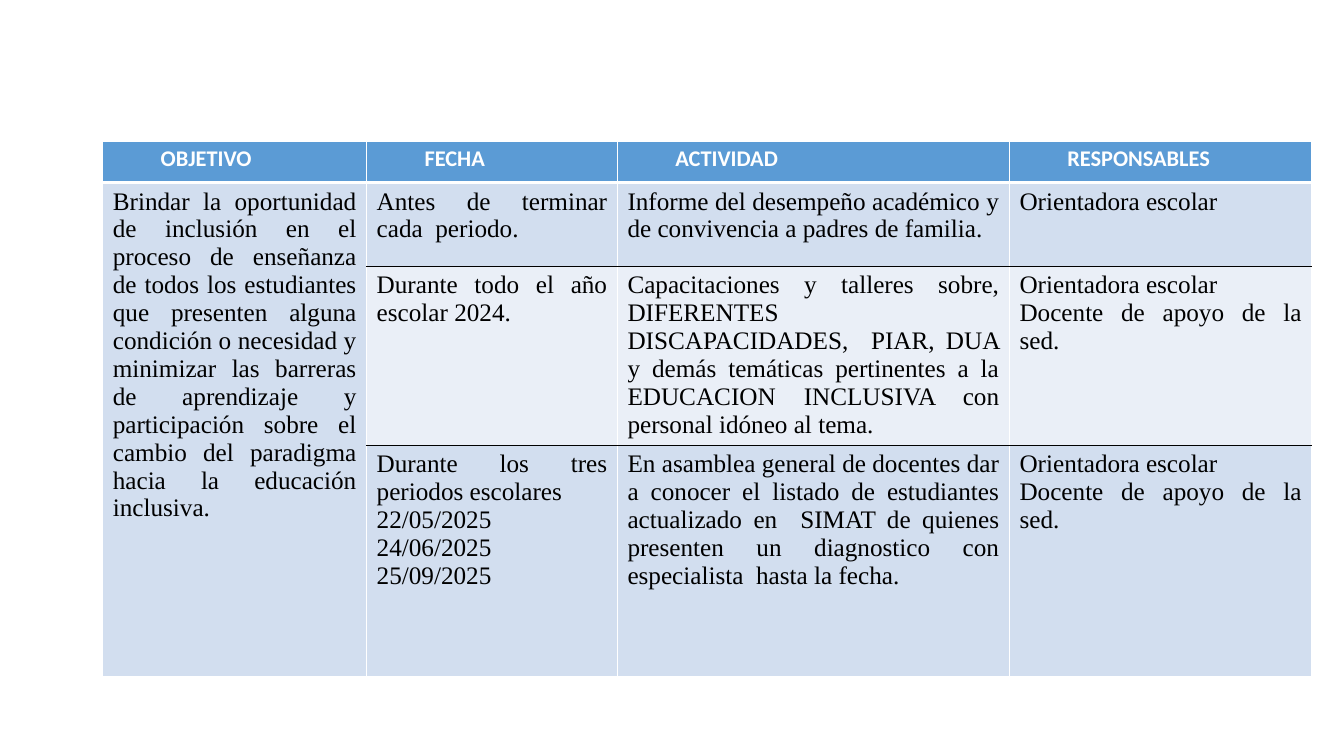
from lxml import etree
from pptx import Presentation
from pptx.dml.color import RGBColor
from pptx.enum.text import PP_ALIGN
from pptx.oxml.ns import qn
from pptx.util import Cm, Pt

JUSTIFY, LEFT = PP_ALIGN.JUSTIFY, PP_ALIGN.LEFT
BLANK_LAYOUT = 6
WHITE, BLACK, BLUE = "FFFFFF", "000000", "5B9BD5"
BANDS = ["D2DEEF", "EAEFF7"]

COLUMN_WIDTHS = [6.65, 6.32, 9.88, 7.62]
ROW_HEIGHTS = [1.04, 2.11, 4.5, 5.84]

HEADINGS = ["OBJETIVO", "FECHA", "ACTIVIDAD", "RESPONSABLES"]
OBJECTIVE = (
    "Brindar la oportunidad de inclusión en el proceso de enseñanza de todos los "
    "estudiantes que presenten alguna condición o necesidad y minimizar las barreras "
    "de aprendizaje y participación sobre el cambio del paradigma hacia la educación "
    "inclusiva."
)
COUNSELLOR = "Orientadora escolar"
TEAM = [COUNSELLOR, "Docente de apoyo de la sed."]
# Each activity: date, activity and people in charge, as lists of paragraphs
ACTIVITIES = [
    (
        ["Antes de terminar cada  periodo."],
        ["Informe del desempeño académico y de convivencia a padres de familia."],
        [COUNSELLOR],
    ),
    (
        ["Durante todo el año escolar 2024."],
        ["Capacitaciones y talleres sobre, DIFERENTES DISCAPACIDADES,  PIAR, DUA y "
         "demás temáticas pertinentes a la EDUCACION INCLUSIVA con personal idóneo "
         "al tema."],
        TEAM,
    ),
    (
        ["Durante los tres periodos escolares", "22/05/2025  24/06/2025", "25/09/2025"],
        ["En asamblea general de docentes dar a conocer el listado de estudiantes "
         "actualizado en  SIMAT de quienes presenten un diagnostico con especialista  "
         "hasta la fecha."],
        TEAM,
    ),
]


def rgb(value):
    return RGBColor.from_string(value)


class PlanSlide:
    """Holds the slide and the styles of its heading and body cells."""

    heading_font, heading_size = "Calibri", Pt(16)
    body_font, body_size = "Times New Roman", Pt(18)

    def __init__(self, deck):
        self.slide = deck.slides.add_slide(deck.slide_layouts[BLANK_LAYOUT])

    def table(self, left, top, widths, heights):
        frame = self.slide.shapes.add_table(
            len(heights), len(widths), Cm(left), Cm(top), Cm(sum(widths)), Cm(sum(heights))
        )
        for column, width in zip(frame.table.columns, widths):
            column.width = Cm(width)
        for row, height in zip(frame.table.rows, heights):
            row.height = Cm(height)
        return frame.table

    def surface(self, cell, fill, top=(WHITE, 1), bottom=(WHITE, 1)):
        """Set borders, as (colour, points), and then the fill of a cell."""
        properties = cell._tc.get_or_add_tcPr()
        sides = {"L": (WHITE, 1), "R": (WHITE, 1), "T": top, "B": bottom}
        for side, (color, points) in sides.items():
            line = etree.SubElement(properties, qn(f"a:ln{side}"), w=str(Pt(points)))
            solid = etree.SubElement(line, qn("a:solidFill"))
            etree.SubElement(solid, qn("a:srgbClr"), val=color)
        cell.fill.solid()
        cell.fill.fore_color.rgb = rgb(fill)

    def run(self, paragraph, text, font, size, color, bold):
        run = paragraph.add_run()
        run.text = text
        run.font.name, run.font.size, run.font.bold = font, size, bold
        run.font.color.rgb = rgb(color)

    def heading(self, cell, text):
        cell.margin_left = cell.margin_right = Cm(0.19)
        cell.margin_top = cell.margin_bottom = 0
        paragraph = cell.text_frame.paragraphs[0]
        paragraph.alignment, paragraph.line_spacing = JUSTIFY, 1.15
        paragraph._p.get_or_add_pPr().set("marL", str(Cm(1.27)))
        self.run(paragraph, text, self.heading_font, self.heading_size, WHITE, True)
        self.surface(cell, BLUE, bottom=(WHITE, 3))

    def body(self, cell, lines, alignment=JUSTIFY):
        frame = cell.text_frame
        for index, text in enumerate(lines):
            paragraph = frame.add_paragraph() if index else frame.paragraphs[0]
            paragraph.alignment = alignment
            self.run(paragraph, text, self.body_font, self.body_size, BLACK, False)


def main():
    deck = Presentation()
    deck.slide_width, deck.slide_height = Cm(33.87), Cm(19.05)
    plan = PlanSlide(deck)
    table = plan.table(2.59, 3.56, COLUMN_WIDTHS, ROW_HEIGHTS)

    for column, heading in enumerate(HEADINGS):
        plan.heading(table.cell(0, column), heading)

    last = len(ACTIVITIES)
    table.cell(1, 0).merge(table.cell(last, 0))
    plan.body(table.cell(1, 0), [OBJECTIVE])

    divider, edge = (BLACK, 0.25), (WHITE, 1)
    for row, activity in enumerate(ACTIVITIES, start=1):
        plan.surface(table.cell(row, 0), BANDS[0])
        top = (WHITE, 3) if row == 1 else divider
        bottom = edge if row == last else divider
        for column, lines in enumerate(activity, start=1):
            cell = table.cell(row, column)
            plan.body(cell, lines, LEFT if lines == [COUNSELLOR] else JUSTIFY)
            plan.surface(cell, BANDS[(row - 1) % 2], top, bottom)

    deck.save("out.pptx")


if __name__ == "__main__":
    main()
